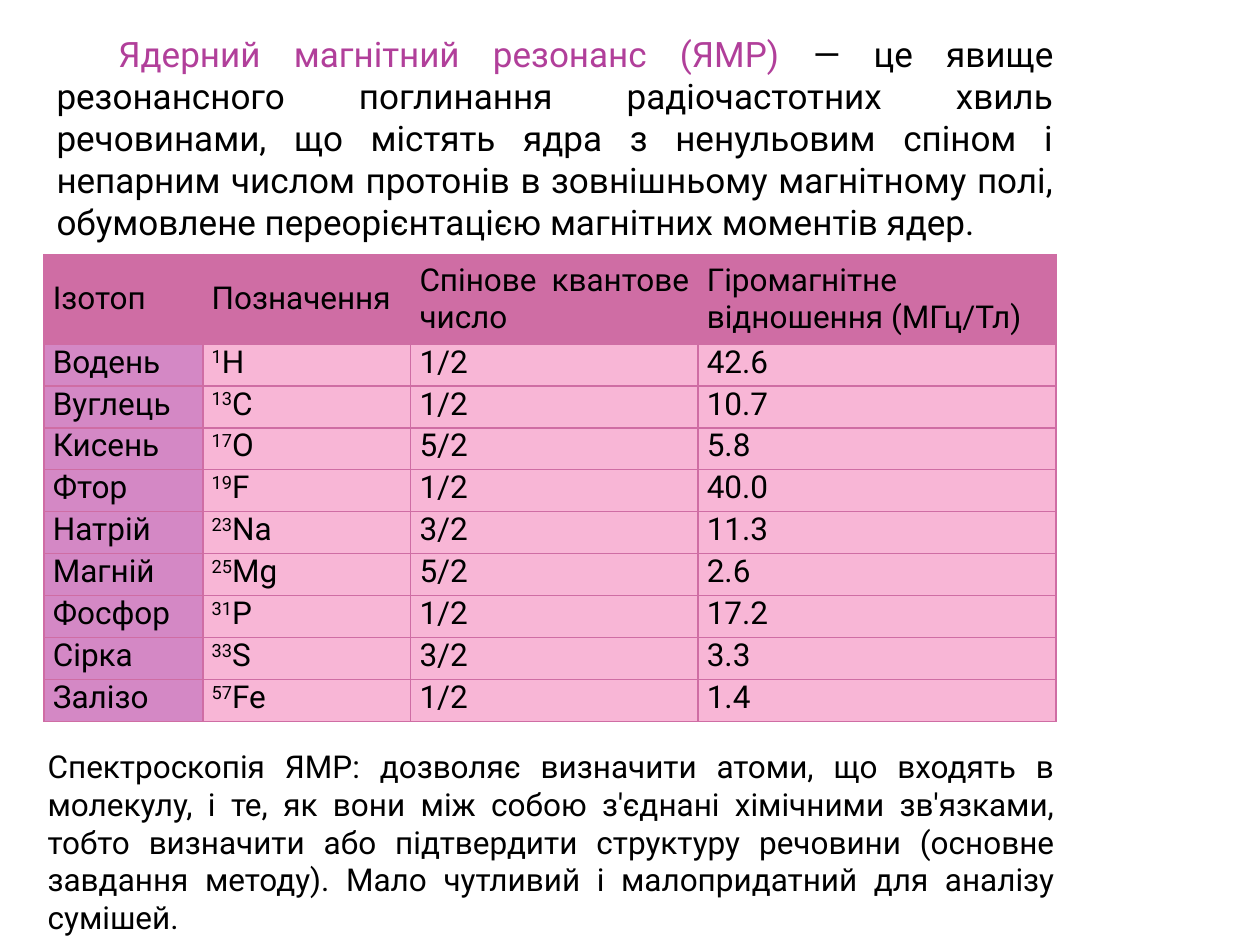
from lxml.etree import SubElement
from pptx import Presentation
from pptx.dml.color import RGBColor
from pptx.enum.text import MSO_ANCHOR, MSO_AUTO_SIZE, PP_ALIGN
from pptx.oxml import parse_xml
from pptx.oxml.ns import nsdecls, qn
from pptx.util import Inches, Pt

WIDTH, HEIGHT = Inches(10), Inches(7.5)
FONT = "Roboto"
COLORS = {
    "text": "000000",
    "term": "B13F9A",
    "header": "CF6DA4",
    "isotope": "D488C5",
    "value": "F8B6D6",
    "border": "CF6DA4",
}
COLUMN_SHARES = [12.6, 16.5, 22.8, 28.4]
HEADER_SHARE, ROW_SHARE = 9.47, 4.44

HEADERS = ["Ізотоп", "Позначення", "Спінове квантове число",
           "Гіромагнітне відношення (МГц/Тл)"]
ISOTOPES = [
    ("Водень", "1", "H", "1/2", "42.6"),
    ("Вуглець", "13", "C", "1/2", "10.7"),
    ("Кисень", "17", "O", "5/2", "5.8"),
    ("Фтор", "19", "F", "1/2", "40.0"),
    ("Натрій", "23", "Na", "3/2", "11.3"),
    ("Магній", "25", "Mg", "5/2", "2.6"),
    ("Фосфор", "31", "P", "1/2", "17.2"),
    ("Сірка", "33", "S", "3/2", "3.3"),
    ("Залізо", "57", "Fe", "1/2", "1.4"),
]
TERM = "Ядерний магнітний резонанс (ЯМР) "
DEFINITION = (
    "— це явище резонансного поглинання радіочастотних хвиль речовинами, "
    "що містять ядра з ненульовим спіном і непарним числом протонів в "
    "зовнішньому магнітному полі, обумовлене переорієнтацією магнітних "
    "моментів ядер."
)
SPECTROSCOPY = (
    "Спектроскопія ЯМР: дозволяє визначити атоми, що входять в молекулу, "
    "і те, як вони між собою з'єднані хімічними зв'язками, тобто визначити "
    "або підтвердити структуру речовини (основне завдання методу). Мало "
    "чутливий і малопридатний для аналізу сумішей."
)


def across(percent):
    return int(WIDTH * percent / 100)


def down(percent):
    return int(HEIGHT * percent / 100)


def color(name):
    return RGBColor.from_string(COLORS[name])


def format_paragraph(paragraph, size):
    paragraph.alignment = PP_ALIGN.JUSTIFY
    paragraph.font.name = FONT
    paragraph.font.size = Pt(size)
    paragraph.font.color.rgb = color("text")


def add_text(slide, left, top, width, height, parts, size, indent=0):
    box = slide.shapes.add_textbox(across(left), down(top), across(width), down(height))
    frame = box.text_frame
    frame.word_wrap = True
    frame.auto_size = MSO_AUTO_SIZE.SHAPE_TO_FIT_TEXT
    paragraph = frame.paragraphs[0]
    if indent:
        properties = paragraph._p.get_or_add_pPr()
        properties.set("marL", "0")
        properties.set("indent", str(across(indent)))
    format_paragraph(paragraph, size)
    for text, color_name in parts:
        run = paragraph.add_run()
        run.text = text
        if color_name != "text":
            run.font.color.rgb = color(color_name)


def add_borders(cell):
    properties = cell._tc.get_or_add_tcPr()
    for position, side in enumerate(("lnL", "lnR", "lnT", "lnB")):
        line = parse_xml(f'<a:{side} {nsdecls("a")} w="{Pt(0.9)}"/>')
        fill = SubElement(line, qn("a:solidFill"))
        SubElement(fill, qn("a:srgbClr")).set("val", COLORS["border"])
        properties.insert(position, line)


def fill_cell(cell, text, fill, superscript="", anchor=MSO_ANCHOR.TOP):
    cell.margin_left = cell.margin_right = Inches(0.07)
    cell.margin_top = cell.margin_bottom = 0
    cell.vertical_anchor = anchor
    cell.fill.solid()
    cell.fill.fore_color.rgb = color(fill)
    add_borders(cell)
    paragraph = cell.text_frame.paragraphs[0]
    format_paragraph(paragraph, 18)
    if superscript:
        run = paragraph.add_run()
        run.text = superscript
        run._r.get_or_add_rPr().set("baseline", "30000")
    paragraph.add_run().text = text


def add_isotope_table(slide, left, top):
    row_shares = [HEADER_SHARE] + [ROW_SHARE] * len(ISOTOPES)
    table = slide.shapes.add_table(
        len(row_shares), len(COLUMN_SHARES), across(left), down(top),
        across(sum(COLUMN_SHARES)), down(sum(row_shares))).table
    table.horz_banding = False
    for column, share in zip(table.columns, COLUMN_SHARES):
        column.width = across(share)
    for row, share in zip(table.rows, row_shares):
        row.height = down(share)
    for column, text in enumerate(HEADERS):
        header = table.cell(0, column)
        fill_cell(header, text, "header", anchor=MSO_ANCHOR.MIDDLE)
        header.text_frame.paragraphs[0].font.bold = False
    for row, (isotope, mass, symbol, spin, ratio) in enumerate(ISOTOPES, 1):
        fill_cell(table.cell(row, 0), isotope, "isotope")
        fill_cell(table.cell(row, 1), symbol, "value", superscript=mass)
        fill_cell(table.cell(row, 2), spin, "value")
        fill_cell(table.cell(row, 3), ratio, "value")


def main():
    presentation = Presentation()
    presentation.slide_width, presentation.slide_height = WIDTH, HEIGHT
    slide = presentation.slides.add_slide(presentation.slide_layouts[6])
    add_text(slide, 2.8, 78.4, 81.9, 21.6, [(SPECTROSCOPY, "text")], 18)
    add_text(slide, 3.5, 2.8, 81.1, 23.73,
             [(TERM, "term"), (DEFINITION, "text")], 20, indent=4.9)
    add_isotope_table(slide, 3.5, 26.93)
    presentation.save("out.pptx")


if __name__ == "__main__":
    main()
